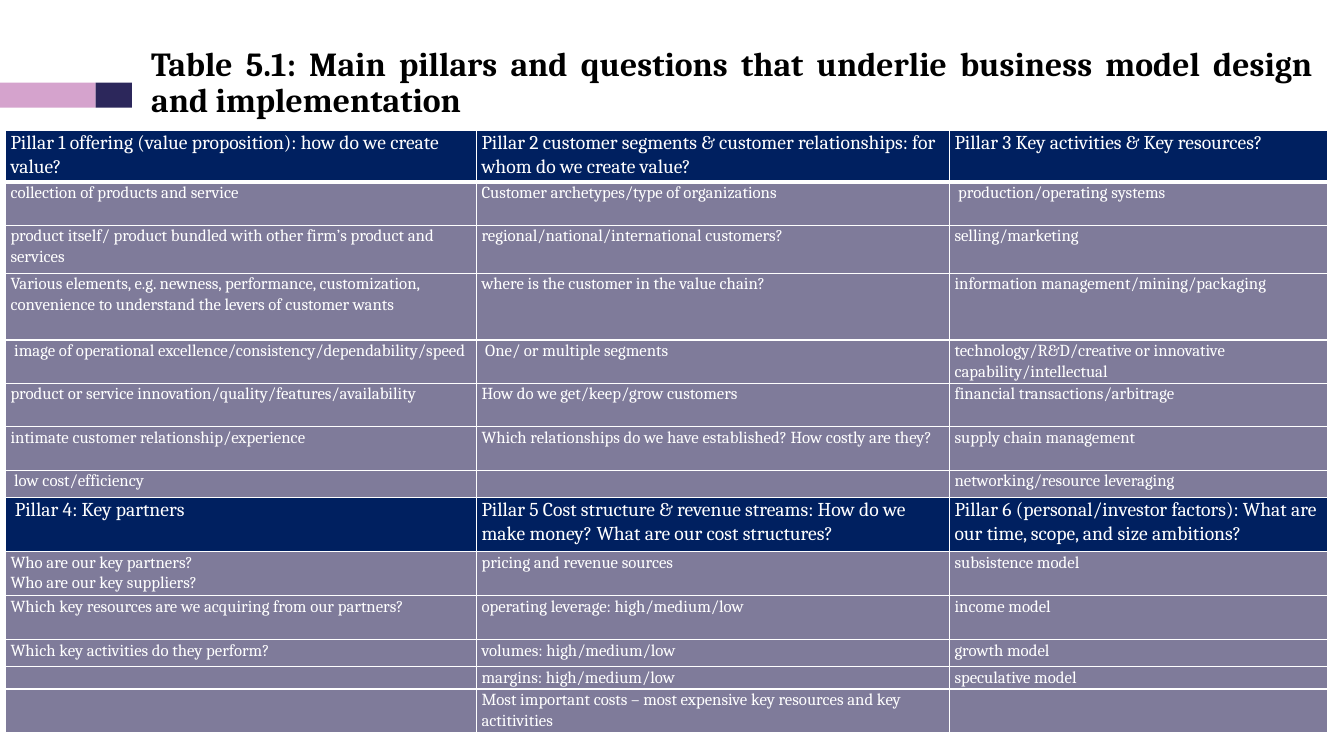
from dataclasses import dataclass

from lxml import etree
from pptx import Presentation
from pptx.dml.color import RGBColor
from pptx.enum import shapes, text
from pptx.oxml import ns
from pptx.util import Pt


@dataclass(frozen=True)
class Theme:
    font: str = "Cambria"
    ink: str = "000000"
    paper: str = "FFFFFF"
    pink: str = "D5A3CD"
    indigo: str = "2C275B"
    heading_fill: str = "002060"
    question_fill: str = "7F7B9A"
    title_size: int = 24
    heading_size: int = 14
    question_size: int = 12


@dataclass(frozen=True)
class Box:
    left: float
    top: float
    width: float
    height: float


THEME = Theme()
TITLE = ("Table 5.1: Main pillars and questions that underlie "
         "business model design and implementation")
COLUMN_SHARES = (4.67, 4.69, 3.75)
HEADING_ROWS = (0, 8)

# Each row: its height in points, then one text for each pillar
PILLAR_ROWS = [
    (36.7, "Pillar 1 offering (value proposition): how do we create value?",
     "Pillar 2 customer segments & customer relationships: for whom do we create value?",
     "Pillar 3 Key activities & Key resources?"),
    (31, "collection of products and service",
     "Customer archetypes/type of organizations",
     " production/operating systems"),
    (34.5, "product itself/ product bundled with other firm’s product and services",
     "regional/national/international customers?",
     "selling/marketing"),
    (47.5, "Various elements, e.g. newness, performance, customization, "
     "convenience to understand the levers of customer wants",
     "where is the customer in the value chain?",
     "information management/mining/packaging"),
    (31, " image of operational excellence/consistency/dependability/speed",
     " One/ or multiple segments",
     "technology/R&D/creative or innovative capability/intellectual"),
    (31, "product or service innovation/quality/features/availability",
     "How do we get/keep/grow customers",
     "financial transactions/arbitrage"),
    (31, "intimate customer relationship/experience",
     "Which relationships do we have established? How costly are they?",
     "supply chain management"),
    (19.3, " low cost/efficiency", "", "networking/resource leveraging"),
    (39, " Pillar 4: Key partners",
     "Pillar 5 Cost structure & revenue streams: How do we make money? "
     "What are our cost structures?",
     "Pillar 6 (personal/investor factors): What are our time, scope, and size ambitions?"),
    (31.5, "Who are our key partners?\nWho are our key suppliers?",
     "pricing and revenue sources", "subsistence model"),
    (31.5, "Which key resources are we acquiring from our partners?",
     "operating leverage: high/medium/low", "income model"),
    (19.3, "Which key activities do they perform?",
     "volumes: high/medium/low", "growth model"),
    (15.8, "", "margins: high/medium/low", "speculative model"),
    (31.5, "",
     "Most important costs – most expensive key resources and key actitivities", ""),
]


def color(code):
    return RGBColor.from_string(code)


def set_font(para, size, code, bold=False):
    para.font.name = THEME.font
    para.font.size = Pt(size)
    para.font.bold = bold
    para.font.color.rgb = color(code)


def add_accent_bar(page, box):
    """Pink bar with an indigo end that leads into the title."""
    pink_width = box.width * 0.725
    parts = [(box.left, pink_width, THEME.pink),
             (box.left + pink_width, box.width - pink_width, THEME.indigo)]
    for left, width, code in parts:
        bar = page.shapes.add_shape(shapes.MSO_SHAPE.RECTANGLE, Pt(left),
                                    Pt(box.top), Pt(width), Pt(box.height))
        bar.shadow.inherit = False
        bar.fill.solid()
        bar.fill.fore_color.rgb = color(code)
        bar.line.fill.background()


def fill_title(page, box):
    title = page.shapes.title
    title.left, title.top = Pt(box.left), Pt(box.top)
    title.width, title.height = Pt(box.width), Pt(box.height)
    frame = title.text_frame
    frame.text = TITLE
    frame.word_wrap = True
    frame.auto_size = text.MSO_AUTO_SIZE.NONE
    frame.vertical_anchor = text.MSO_ANCHOR.MIDDLE
    para = frame.paragraphs[0]
    para.alignment = text.PP_ALIGN.JUSTIFY
    para.line_spacing = 0.9
    para.space_before = Pt(10)
    set_font(para, THEME.title_size, THEME.ink, bold=True)


def add_borders(cell, bottom_width):
    properties = cell._tc.get_or_add_tcPr()
    for side, width in (("L", 1), ("R", 1), ("T", 1), ("B", bottom_width)):
        line = etree.SubElement(properties, ns.qn(f"a:ln{side}"), w=str(Pt(width)))
        fill = etree.SubElement(line, ns.qn("a:solidFill"))
        etree.SubElement(fill, ns.qn("a:srgbClr"), val=THEME.paper)


def fill_cell(cell, words, is_heading, bottom_width):
    add_borders(cell, bottom_width)
    cell.fill.solid()
    cell.fill.fore_color.rgb = color(
        THEME.heading_fill if is_heading else THEME.question_fill)
    cell.margin_left = cell.margin_right = Pt(3.6)
    cell.margin_top = cell.margin_bottom = 0
    size = THEME.heading_size if is_heading else THEME.question_size
    cell.text_frame.text = words
    for para in cell.text_frame.paragraphs:
        para.line_spacing = 1.07
        set_font(para, size, THEME.paper)
        if not words:  # keeps an empty cell from stretching its row
            etree.SubElement(para._p, ns.qn("a:endParaRPr"), sz=str(size * 100))


def add_pillar_table(page, box):
    table = page.shapes.add_table(
        len(PILLAR_ROWS), len(COLUMN_SHARES), Pt(box.left), Pt(box.top),
        Pt(box.width), Pt(box.height)).table
    table.first_row = table.horz_banding = False
    for column, share in zip(table.columns, COLUMN_SHARES):
        column.width = Pt(box.width * share / sum(COLUMN_SHARES))
    for index, (height, *texts) in enumerate(PILLAR_ROWS):
        table.rows[index].height = Pt(height)
        for cell, words in zip(table.rows[index].cells, texts):
            fill_cell(cell, words, index in HEADING_ROWS,
                      bottom_width=3 if index == 0 else 1)


def main():
    deck = Presentation()
    deck.slide_width, deck.slide_height = Pt(960), Pt(540)
    page = deck.slides.add_slide(deck.slide_layouts.get_by_name("Title Only"))
    add_accent_bar(page, Box(0, 59, 94.3, 18))
    fill_title(page, Box(100.8, 26, 844, 67.5))
    add_pillar_table(page, Box(3.9, 93.2, 944.5, 430.6))
    deck.save("out.pptx")


if __name__ == "__main__":
    main()
